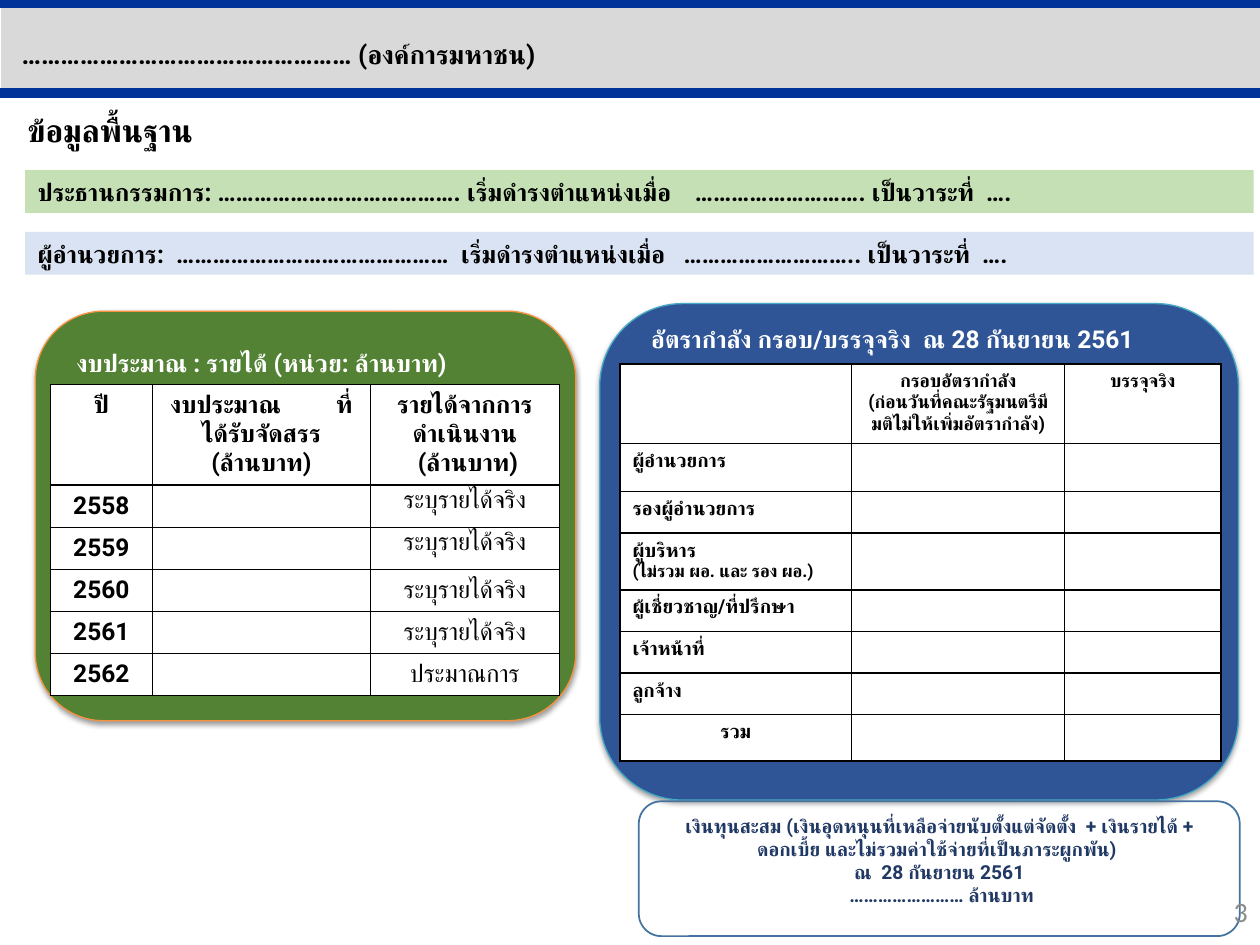
from dataclasses import dataclass

from lxml.etree import SubElement
from pptx import Presentation
from pptx.dml.color import RGBColor
from pptx.enum.shapes import MSO_CONNECTOR as Connector, MSO_SHAPE as Preset
from pptx.enum.text import MSO_ANCHOR as Anchor, MSO_AUTO_SIZE as AutoSize, PP_ALIGN as Align
from pptx.oxml.ns import qn
from pptx.util import Inches, Pt

SLIDE_WIDTH, SLIDE_HEIGHT = Inches(10), Inches(7.5)
COLUMN, ROW = SLIDE_WIDTH / 100, SLIDE_HEIGHT / 75


@dataclass(frozen=True)
class Theme:
    font: str = "Roboto"
    number_font: str = "Calibri"
    black: str = "000000"
    white: str = "FFFFFF"
    navy: str = "003399"
    banner: str = "D9D9D9"
    chair_bar: str = "C5E0B4"
    director_bar: str = "DAE3F3"
    budget: str = "548235"
    budget_edge: str = "F69240"
    staff: str = "2F5597"
    staff_edge: str = "46AAC5"
    fund_edge: str = "43739E"
    fund_text: str = "203864"
    number: str = "8C8C8C"
    heading: float = 18
    number_size: float = 16
    title: float = 15
    body: float = 14
    label: float = 11
    column_head: float = 10.5
    note: float = 10


THEME = Theme()


@dataclass(frozen=True)
class Style:
    size: float
    color: str = THEME.black
    bold: bool = True
    align: Align = Align.LEFT
    font: str = THEME.font


def color(value):
    return RGBColor.from_string(value)


def place(left, top, width, height):
    """Turn grid columns and rows into lengths."""
    return round(left * COLUMN), round(top * ROW), round(width * COLUMN), round(height * ROW)


def write_run(paragraph, text, style, spacing=None):
    run = paragraph.add_run()
    run.text = text
    run.font.size, run.font.bold = Pt(style.size), style.bold
    run.font.name = style.font
    run.font.color.rgb = color(style.color)
    properties = run.font._element
    SubElement(properties, qn("a:cs"), typeface=style.font)
    if spacing:
        properties.set("spc", str(spacing * 100))


def write(frame, paragraphs, style):
    """Write paragraphs of parts: text, a line break, or a number for a gap in points."""
    for index, parts in enumerate(paragraphs):
        paragraph = frame.add_paragraph() if index else frame.paragraphs[0]
        paragraph.alignment = style.align
        for part in [parts] if isinstance(parts, str) else parts:
            if part == "\n":
                paragraph.add_line_break()
            elif isinstance(part, str):
                write_run(paragraph, part, style)
            else:
                write_run(paragraph, " ", style, part)


def add_box(shapes, preset, area, fill=None, edge=None, width=0.75):
    shape = shapes.add_shape(preset, *place(*area))
    shape.shadow.inherit = False
    if fill:
        shape.fill.solid()
        shape.fill.fore_color.rgb = color(fill)
    else:
        shape.fill.background()
    if edge:
        shape.line.color.rgb, shape.line.width = color(edge), Pt(width)
    else:
        shape.line.fill.background()
    return shape


def add_text(shapes, area, paragraphs, style, wrap=True, anchor=Anchor.MIDDLE):
    frame = shapes.add_textbox(*place(*area)).text_frame
    frame.word_wrap, frame.vertical_anchor = wrap, anchor
    write(frame, paragraphs, style)


def add_bar(shapes, top, fill, parts):
    frame = add_box(shapes, Preset.RECTANGLE, (2, top, 97.5, 3.4), fill).text_frame
    frame.word_wrap, frame.vertical_anchor = True, Anchor.MIDDLE
    write(frame, [parts], Style(THEME.body))


def add_rule(shapes, top):
    left, height, width, _ = place(0, top, 100, 0)
    line = shapes.add_connector(Connector.STRAIGHT, left, height, left + width, height)
    line.line.color.rgb, line.line.width = color(THEME.navy), Pt(6)
    SubElement(line._element.spPr, qn("a:effectLst"))


def add_panel(slide, area, fill, edge, heading_area, heading):
    shapes = slide.shapes.add_group_shape().shapes
    panel = add_box(shapes, Preset.ROUNDED_RECTANGLE, area, fill, edge)
    effects = panel._element.spPr.find(qn("a:effectLst"))
    shadow = SubElement(effects, qn("a:outerShdw"), blurRad="40000", dist="20000",
                        dir="5400000", rotWithShape="0")
    tint = SubElement(shadow, qn("a:srgbClr"), val=THEME.black)
    SubElement(tint, qn("a:alpha"), val="38000")
    add_text(shapes, heading_area, [heading], Style(THEME.body, THEME.white))


def format_cell(cell):
    properties = cell._tc.get_or_add_tcPr()
    for side in ("lnL", "lnR", "lnT", "lnB"):
        line = SubElement(properties, qn(f"a:{side}"), w=str(Pt(1)))
        SubElement(SubElement(line, qn("a:solidFill")), qn("a:srgbClr"), val=THEME.black)
    cell.fill.solid()
    cell.fill.fore_color.rgb = color(THEME.white)


def add_table(slide, corner, columns, rows, contents):
    """Contents maps (row, column) to paragraphs and a style; other cells stay empty."""
    area = place(*corner, sum(columns), sum(rows))
    table = slide.shapes.add_table(len(rows), len(columns), *area).table
    for column, width in zip(table.columns, columns):
        column.width = round(width * COLUMN)
    for row, height in zip(table.rows, rows):
        row.height = round(height * ROW)
    for index, cell in enumerate(table.iter_cells()):
        format_cell(cell)
        position = divmod(index, len(columns))
        if position in contents:
            write(cell.text_frame, *contents[position])
        else:
            ending = SubElement(cell.text_frame.paragraphs[0]._p, qn("a:endParaRPr"))
            ending.set("sz", str(THEME.label * 100))
    return table


def add_title(slide):
    title = slide.shapes.title
    title.left, title.top, title.width, title.height = place(0.2, 2.2, 68.7, 6.7)
    frame = title.text_frame
    frame.auto_size, frame.vertical_anchor = AutoSize.NONE, Anchor.TOP
    frame.margin_top = Inches(0.08)
    write(frame, [" …………………………………………… (องค์การมหาชน)"], Style(THEME.title))
    frame.paragraphs[0].line_spacing = 1.0
    slide.shapes._spTree.append(title._element)


def add_budget(slide):
    add_panel(slide, (2.8, 24.7, 42.9, 32.5), THEME.budget, THEME.budget_edge,
              (5.1, 27.1, 35.9, 3.4), "งบประมาณ : รายได้ (หน่วย: ล้านบาท)")
    strong = Style(THEME.body, align=Align.CENTER)
    plain = Style(THEME.body, bold=False, align=Align.CENTER)
    contents = {
        (0, 0): (["ปี"], strong),
        (0, 1): ([["งบประมาณ", 28, "ที่ได้รับจัดสรร"], "(ล้านบาท)"], strong),
        (0, 2): (["รายได้จากการดำเนินงาน", " (ล้านบาท)"], strong),
    }
    years = range(2558, 2563)
    for row, year in enumerate(years, 1):
        income = "ประมาณการ" if year == years[-1] else "ระบุรายได้จริง"
        contents[row, 0] = [str(year)], strong
        contents[row, 2] = [income], plain
    table = add_table(slide, (4, 30.5), (8.1, 17.3, 15), [8] + [3.3] * len(years), contents)
    for row in (1, 2):
        cell = table.cell(row, 2)
        cell.margin_left = cell.margin_right = Inches(0.07)
        cell.margin_top = cell.margin_bottom = 0


def add_staff(slide):
    add_panel(slide, (47.6, 24.1, 50.7, 39.4), THEME.staff, THEME.staff_edge,
              (50.7, 25.2, 46.1, 3.4), "อัตรากำลัง กรอบ/บรรจุจริง  ณ 28 กันยายน 2561")
    head = Style(THEME.column_head, align=Align.CENTER)
    contents = {
        (0, 1): (["กรอบอัตรากำลัง", "(ก่อนวันที่คณะรัฐมนตรีมีมติไม่ให้เพิ่มอัตรากำลัง)"], head),
        (0, 2): (["บรรจุจริง"], head),
    }
    positions = ("ผู้อำนวยการ", "รองผู้อำนวยการ", "ผู้บริหาร", "ผู้เชี่ยวชาญ/ที่ปรึกษา", "เจ้าหน้าที่", "ลูกจ้าง")
    for row, position in enumerate(positions, 1):
        contents[row, 0] = [position], Style(THEME.label)
    contents[7, 0] = ["รวม"], Style(THEME.label, align=Align.CENTER)
    rows = (6.3, 3.8, 3.3, 4.5, 3.3, 3.3, 3.3, 3.7)
    table = add_table(slide, (49.2, 28.9), (18.4, 16.9, 12.4), rows, contents)
    note = table.cell(3, 0).text_frame.add_paragraph()
    write_run(note, "(ไม่รวม ผอ. และ รอง ผอ.)", Style(THEME.note))


def add_fund(slide):
    box = add_box(slide.shapes, Preset.ROUNDED_RECTANGLE, (50.7, 63.6, 47.7, 10.7),
                  edge=THEME.fund_edge, width=1)
    box.text_frame.word_wrap, box.text_frame.vertical_anchor = True, Anchor.TOP
    purpose = ("เงินทุนสะสม (เงินอุดหนุนที่เหลือจ่ายนับตั้งแต่จัดตั้ง  + เงินรายได้ + "
               "ดอกเบี้ย และไม่รวมค่าใช้จ่ายที่เป็นภาระผูกพัน) ")
    write(box.text_frame, [[purpose, "\n", "ณ  28 กันยายน 2561"], " …………………… ล้านบาท"],
          Style(THEME.label, THEME.fund_text, align=Align.CENTER))


def main():
    presentation = Presentation()
    presentation.slide_width, presentation.slide_height = SLIDE_WIDTH, SLIDE_HEIGHT
    slide = presentation.slides.add_slide(presentation.slide_layouts[5])
    shapes = slide.shapes
    add_box(shapes, Preset.RECTANGLE, (0.1, 0.5, 99.9, 6.8), THEME.banner)
    for top in (7.4, 0.2):
        add_rule(shapes, top)
    add_text(shapes, (1.2, 8.3, 17, 4), ["ข้อมูลพื้นฐาน"], Style(THEME.heading), False, Anchor.TOP)
    add_title(slide)
    add_bar(shapes, 18.4, THEME.director_bar,
            ["ผู้อำนวยการ:  ………………………………………  เริ่มดำรงตำแหน่งเมื่อ", 7, "……………………….. เป็นวาระที่  …."])
    add_bar(shapes, 13.5, THEME.chair_bar,
            ["ประธานกรรมการ: …………………………………. เริ่มดำรงตำแหน่งเมื่อ", 10, "………………………. เป็นวาระที่  …."])
    add_budget(slide)
    add_staff(slide)
    add_fund(slide)
    add_text(shapes, (77.5, 70.3, 22.5, 4), ["3"],
             Style(THEME.number_size, THEME.number, False, Align.RIGHT, THEME.number_font))
    presentation.save("out.pptx")


if __name__ == "__main__":
    main()
